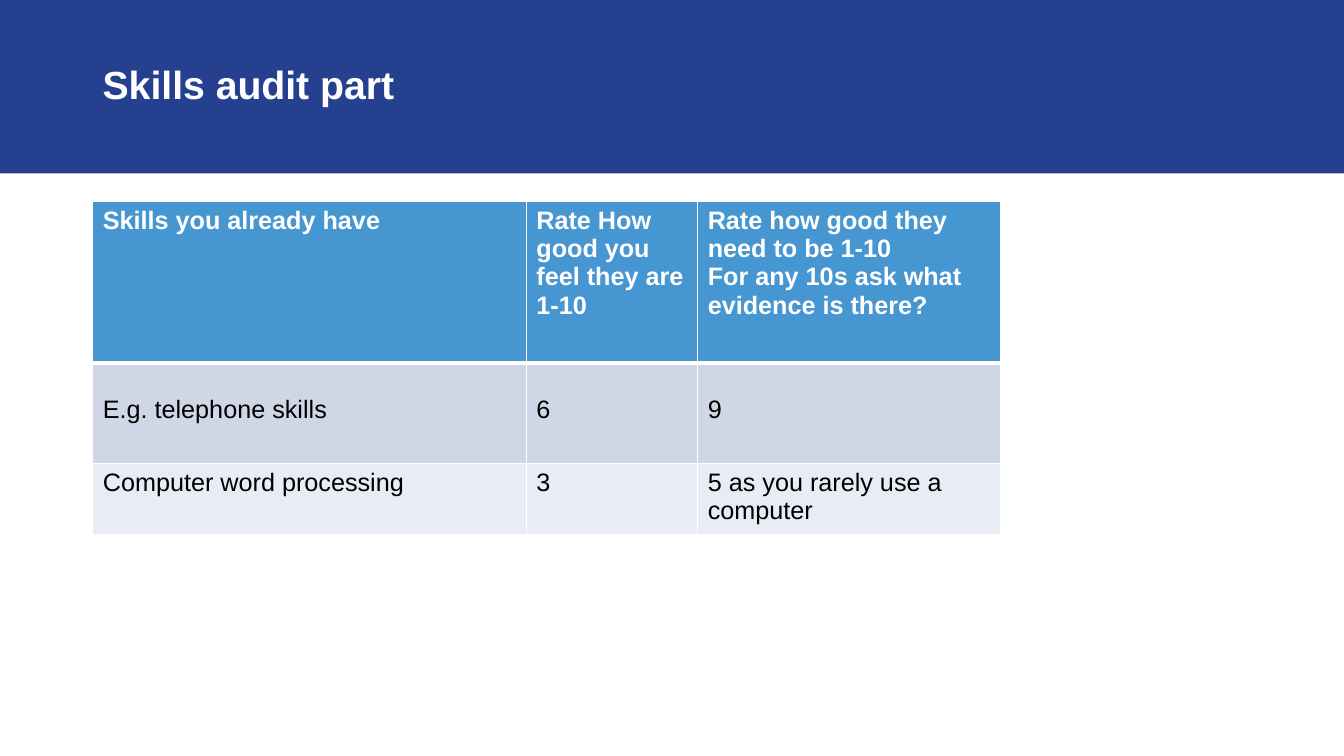
from dataclasses import dataclass

import pptx
import pptx.dml.color
import pptx.enum.shapes
import pptx.enum.text
import pptx.oxml
import pptx.oxml.ns
import pptx.util

EMU_PER_PX = 9144  # 100 px to the inch
FONT = "Arial"
COLORS = {
    "banner": "25408F",
    "header": "4696D2",
    "dark_band": "CFD7E7",
    "light_band": "E8ECF4",
    "white": "FFFFFF",
    "black": "000000",
}
COLUMN_WIDTHS = (430, 170, 300)
THIN, THICK = 1, 3


@dataclass(frozen=True)
class SkillRow:
    height: int
    texts: tuple[str, ...]
    fill: str
    color: str = "black"
    bold: bool = False
    margin_top: int = 5
    border_top: int = THIN
    border_bottom: int = THIN


SKILL_ROWS = (
    SkillRow(
        160,
        (
            "Skills you already have",
            "Rate How good you feel they are 1-10",
            "Rate how good they need to be 1-10\nFor any 10s ask what evidence is there?",
        ),
        "header", color="white", bold=True, border_bottom=THICK,
    ),
    SkillRow(100, ("E.g. telephone skills", "6", "9"), "dark_band",
             margin_top=33, border_top=THICK),
    SkillRow(70, ("Computer word processing", "3", "5 as you rarely use a computer"),
             "light_band"),
)


def px(length: int) -> pptx.util.Emu:
    return pptx.util.Emu(length * EMU_PER_PX)


def rgb(name: str) -> pptx.dml.color.RGBColor:
    return pptx.dml.color.RGBColor.from_string(COLORS[name])


def format_text(text_frame, size: int, color: str, bold: bool) -> None:
    for paragraph in text_frame.paragraphs:
        for run in paragraph.runs:
            run.font.name = FONT
            run.font.size = pptx.util.Pt(size)
            run.font.bold = bold
            run.font.color.rgb = rgb(color)


def add_banner(slide) -> None:
    banner = slide.shapes.add_shape(
        pptx.enum.shapes.MSO_SHAPE.RECTANGLE, 0, 0, px(1333), px(172))
    banner.shadow.inherit = False
    banner.fill.solid()
    banner.fill.fore_color.rgb = rgb("banner")
    banner.line.fill.background()


def add_title(slide) -> None:
    title = slide.shapes.add_textbox(px(92), px(14), px(1150), px(145))
    text_frame = title.text_frame
    text_frame.word_wrap = True
    text_frame.vertical_anchor = pptx.enum.text.MSO_ANCHOR.MIDDLE
    text_frame.text = "Skills audit part"
    text_frame.paragraphs[0].line_spacing = 0.9
    format_text(text_frame, 28, "white", bold=True)


def add_cell_borders(cell, top: int, bottom: int) -> None:
    """Draw white borders; they must come before the cell's fill in the XML."""
    properties = cell._tc.get_or_add_tcPr()
    for side, width in (("L", THIN), ("R", THIN), ("T", top), ("B", bottom)):
        properties.append(pptx.oxml.parse_xml(
            f'<a:ln{side} {pptx.oxml.ns.nsdecls("a")} w="{pptx.util.Pt(width)}">'
            f'<a:solidFill><a:srgbClr val="{COLORS["white"]}"/></a:solidFill></a:ln{side}>'))


def fill_cell(cell, text: str, row: SkillRow) -> None:
    add_cell_borders(cell, row.border_top, row.border_bottom)
    cell.fill.solid()
    cell.fill.fore_color.rgb = rgb(row.fill)
    cell.margin_left = cell.margin_right = px(10)
    cell.margin_top = px(row.margin_top)
    cell.margin_bottom = px(5)
    cell.text_frame.text = text
    format_text(cell.text_frame, 18, row.color, row.bold)


def add_skills_table(slide) -> None:
    height = sum(row.height for row in SKILL_ROWS)
    table = slide.shapes.add_table(
        len(SKILL_ROWS), len(COLUMN_WIDTHS),
        px(92), px(200), px(sum(COLUMN_WIDTHS)), px(height)).table
    for column, width in zip(table.columns, COLUMN_WIDTHS):
        column.width = px(width)
    for table_row, row in zip(table.rows, SKILL_ROWS):
        table_row.height = px(row.height)
        for cell, text in zip(table_row.cells, row.texts):
            fill_cell(cell, text, row)


def main() -> None:
    presentation = pptx.Presentation()
    presentation.slide_width = px(1333)
    presentation.slide_height = px(750)
    slide = presentation.slides.add_slide(presentation.slide_layouts[6])
    add_banner(slide)
    add_title(slide)
    add_skills_table(slide)
    presentation.save("out.pptx")


if __name__ == "__main__":
    main()
